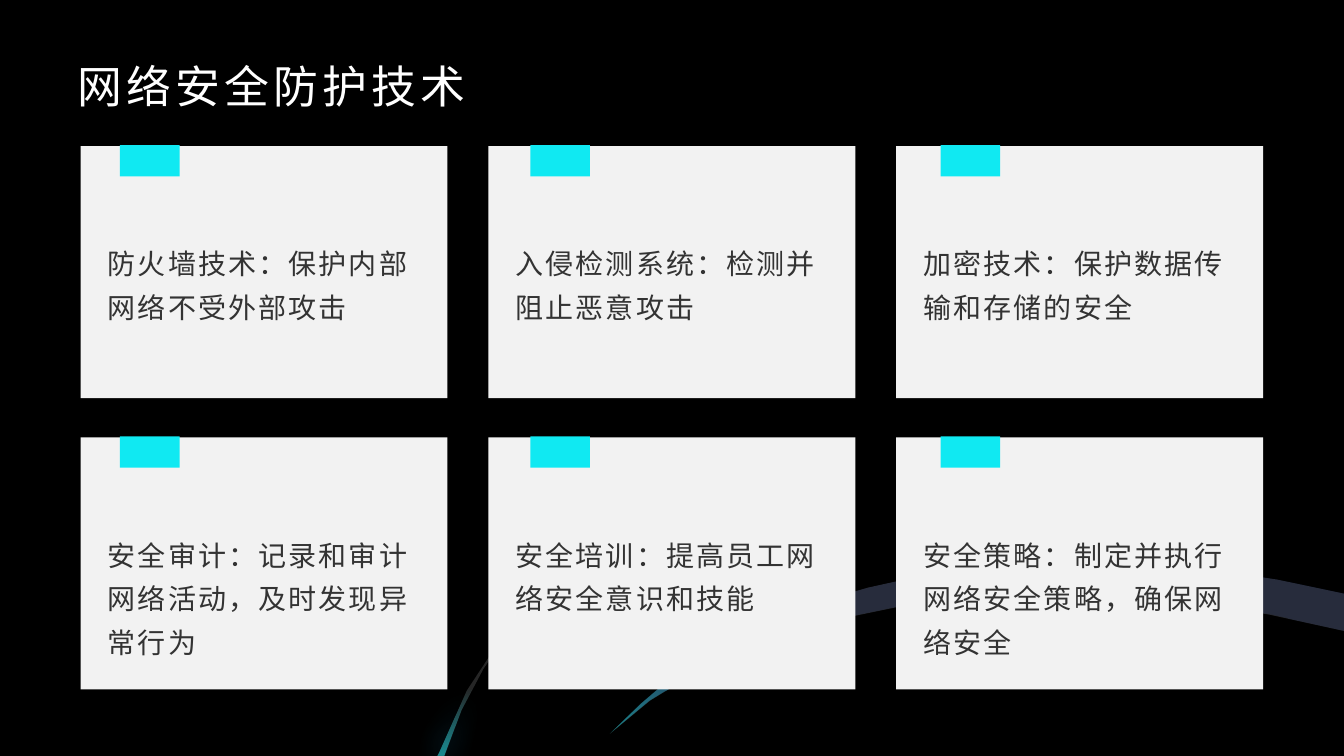
"""Build a slide of six network security cards over two curved light streaks."""
from dataclasses import dataclass
from typing import Optional

from lxml.etree import SubElement
from pptx import Presentation
from pptx.dml.color import RGBColor
from pptx.enum.shapes import MSO_SHAPE as Kind
from pptx.enum.text import MSO_ANCHOR as Anchor
from pptx.oxml.ns import qn
from pptx.util import Inches, Pt

BLACK = RGBColor(0x00, 0x00, 0x00)
WHITE = RGBColor(0xFF, 0xFF, 0xFF)
COAL = RGBColor(0x26, 0x26, 0x26)
INK = RGBColor(0x33, 0x33, 0x33)
PAPER = RGBColor(0xF2, 0xF2, 0xF2)
CYAN = RGBColor(0x10, 0xE9, 0xF2)
BLUE = RGBColor(0x33, 0x66, 0xFF)
GLOW = RGBColor(0x1E, 0xB5, 0xF7)

WIDE, HIGH = Inches(13.33), Inches(7.5)
ROWS = 38.53


@dataclass(frozen=True)
class Area:
    """A box in percent of the slide, with the step between columns."""
    left: float
    top: float
    width: float
    height: float
    step: float = 0

    def cell(self, col: int, row: int) -> "Area":
        return Area(self.left + col * self.step, self.top + row * ROWS,
                    self.width, self.height)

    def box(self) -> tuple[int, int, int, int]:
        return (across(self.left), down(self.top),
                across(self.width), down(self.height))


@dataclass(frozen=True)
class Style:
    face: str
    size: float
    color: RGBColor
    track: int
    lead: float = 1
    edge: float = 0.05
    anchor: Anchor = Anchor.TOP


@dataclass(frozen=True)
class Stop:
    place: float
    color: RGBColor
    alpha: int


@dataclass(frozen=True)
class Streak:
    points: list[tuple[float, float]]
    stops: tuple[Stop, Stop]
    angle: float
    glow: Optional[RGBColor] = None


CARD = Area(6, 19.33, 27.3, 33.33, 30.34)
TAB = Area(8.93, 19.2, 4.43, 4.13, 30.53)
NOTE = Area(7.28, 30.67, 24.53, 19.47, 30.34)
HEAD = Area(5.03, 6.67, 90.02, 8.27)

TITLE = Style("Cabin", 32, WHITE, 300, edge=0, anchor=Anchor.BOTTOM)
BODY = Style("Lato", 20, INK, 150, lead=1.3)

NOTES = [
    "防火墙技术：保护内部网络不受外部攻击",
    "入侵检测系统：检测并阻止恶意攻击",
    "加密技术：保护数据传输和存储的安全",
    "安全审计：记录和审计网络活动，及时发现异常行为",
    "安全培训：提高员工网络安全意识和技能",
    "安全策略：制定并执行网络安全策略，确保网络安全",
]

BAND = Streak([
    (45.38, 97.07), (47.7, 93.07), (50.25, 89.2), (53.18, 85.73),
    (56.55, 82.67), (60.45, 79.87), (64.58, 77.73), (69, 76),
    (73.65, 74.93), (77.93, 74.4), (80.78, 74.27), (85.05, 74.53),
    (90.6, 75.47), (95.03, 76.67), (100, 78.53), (100, 83.47),
    (94.5, 81.33), (90.6, 80.13), (82.65, 78.8), (75, 78.67),
    (67.95, 79.87), (61.43, 82.27), (56.4, 85.07), (52.05, 88.67),
    (48.38, 92.67),
], (Stop(0, CYAN, 50), Stop(0.31, BLUE, 10)), 45)
TAIL = Streak([
    (39.45, 80.4), (37.71, 83.93), (35.96, 88.53), (34.35, 93.95),
    (33.08, 100), (32.55, 100), (32.7, 99.47), (34.73, 91.37),
    (36.95, 85.39),
], (Stop(0.55, CYAN, 0), Stop(1, CYAN, 50)), 270, GLOW)


def across(share: float) -> int:
    return round(WIDE * share / 100)


def down(share: float) -> int:
    return round(HIGH * share / 100)


def plain(shape) -> None:
    shape.shadow.inherit = False
    shape.line.fill.background()


def block(slide, area: Area, color: RGBColor) -> None:
    shape = slide.shapes.add_shape(Kind.RECTANGLE, *area.box())
    plain(shape)
    shape.fill.solid()
    shape.fill.fore_color.rgb = color


def write(slide, area: Area, text: str, style: Style) -> None:
    frame = slide.shapes.add_textbox(*area.box()).text_frame
    frame.word_wrap = True
    frame.vertical_anchor = style.anchor
    frame.margin_top = frame.margin_bottom = Inches(style.edge)
    para = frame.paragraphs[0]
    para.text = text
    para.line_spacing = style.lead
    font = para.font
    font.name, font.size = style.face, Pt(style.size)
    font.color.rgb = style.color
    font._element.set("spc", str(style.track))


def curve(slide, streak: Streak):
    spots = [(across(x), down(y)) for x, y in streak.points]
    pen = slide.shapes.build_freeform(*spots[0])
    pen.add_line_segments(spots[1:])
    shape = pen.convert_to_shape()
    plain(shape)
    return shape


def shine(shape, streak: Streak) -> None:
    fill = shape.fill
    fill.gradient()
    fill.gradient_angle = streak.angle
    for mark, stop in zip(fill.gradient_stops, streak.stops):
        mark.position = stop.place
        mark.color.rgb = stop.color
        tint = mark._gs.find(qn("a:srgbClr"))
        SubElement(tint, qn("a:alpha"), val=str(stop.alpha * 1000))
    if streak.glow:
        list_ = shape._element.spPr.find(qn("a:effectLst"))
        cast = SubElement(list_, qn("a:outerShdw"), blurRad=str(Pt(20)),
                          dist="0", dir="0")
        SubElement(cast, qn("a:srgbClr"), val=str(streak.glow))


def main() -> None:
    deck = Presentation()
    deck.slide_width, deck.slide_height = WIDE, HIGH
    slide = deck.slides.add_slide(deck.slide_layouts[6])
    back = slide.background.fill
    back.solid()
    back.fore_color.rgb = BLACK

    for streak in (BAND, TAIL):
        base = curve(slide, streak)
        base.fill.solid()
        base.fill.fore_color.rgb = COAL
    for streak in (BAND, TAIL):
        shine(curve(slide, streak), streak)

    write(slide, HEAD, "网络安全防护技术", TITLE)
    for place, text in enumerate(NOTES):
        row, col = divmod(place, 3)
        block(slide, CARD.cell(col, row), PAPER)
        block(slide, TAB.cell(col, row), CYAN)
        write(slide, NOTE.cell(col, row), text, BODY)
    deck.save("out.pptx")


if __name__ == "__main__":
    main()
